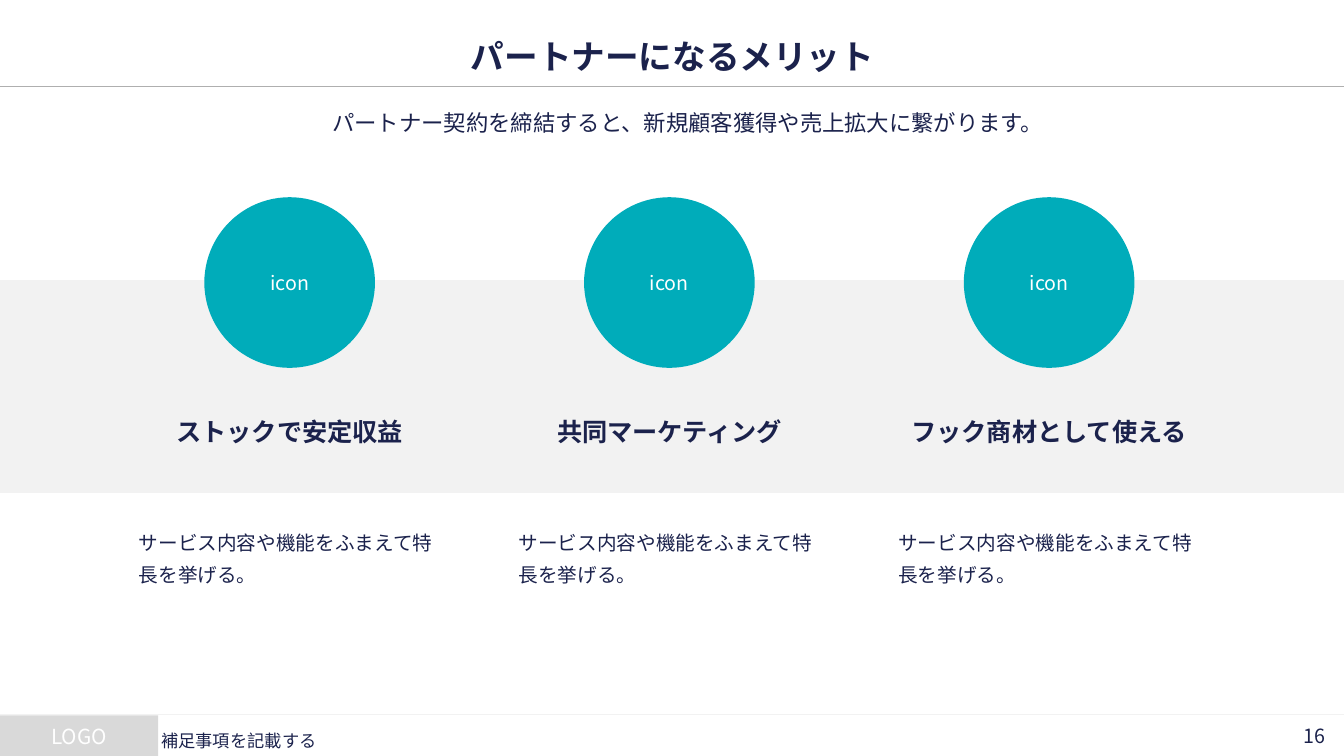
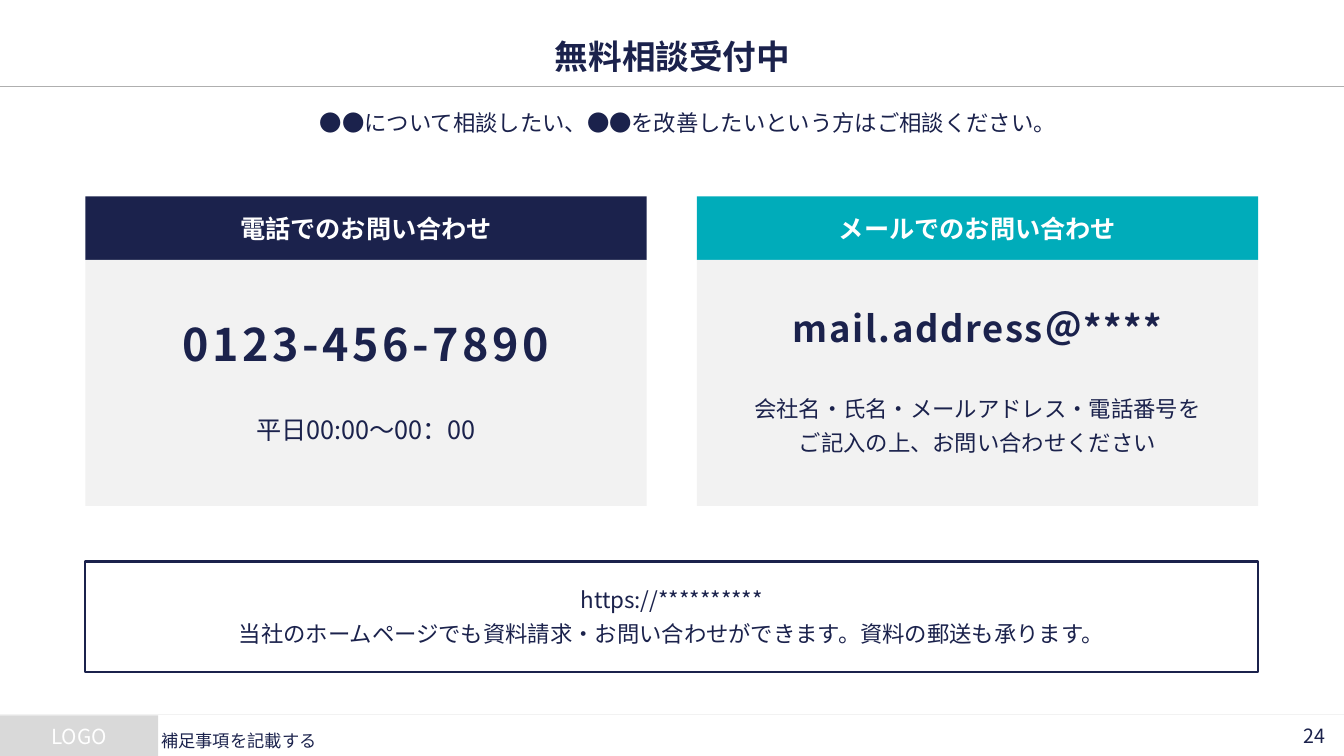
from dataclasses import dataclass, replace

from lxml import etree
from pptx import Presentation
from pptx.dml.color import RGBColor
from pptx.enum.shapes import MSO_CONNECTOR, MSO_SHAPE
from pptx.enum.text import MSO_ANCHOR, PP_ALIGN
from pptx.oxml.ns import qn
from pptx.util import Cm, Pt

RECT, OVAL = MSO_SHAPE.RECTANGLE, MSO_SHAPE.OVAL
STRAIGHT = MSO_CONNECTOR.STRAIGHT
LEFT, CENTER, RIGHT = PP_ALIGN.LEFT, PP_ALIGN.CENTER, PP_ALIGN.RIGHT
TOP, MIDDLE = MSO_ANCHOR.TOP, MSO_ANCHOR.MIDDLE


@dataclass(frozen=True)
class Theme:
    navy: str = "1B224C"
    teal: str = "00ACBA"
    white: str = "FFFFFF"
    panel: str = "F2F2F2"
    logo_fill: str = "D9D9D9"
    rule: str = "AFAFAF"
    font: str = "Noto Sans CJK JP"
    heading_font: str = "Arial"
    title: float = 24
    heading: float = 18
    lead: float = 16
    body: float = 14
    logo: float = 14.8
    note: float = 12.3
    phone: float = 32
    mail: float = 26
    width: float = 33.87
    height: float = 19.05


THEME = Theme()


@dataclass(frozen=True)
class Style:
    size: float
    color: str = THEME.navy
    bold: bool = False
    align: PP_ALIGN = CENTER
    font: str = THEME.font
    tracking: float = 0
    after: float = 0
    leading: float = 1


TITLE = Style(THEME.title, bold=True)
LEAD = Style(THEME.lead, leading=1.3)
LOGO = Style(THEME.logo, THEME.white)
PAGE = Style(THEME.body, align=RIGHT)
NOTE = Style(THEME.note, align=LEFT, leading=1.5)
ICON = Style(THEME.body, THEME.white)
MERIT = Style(THEME.heading, bold=True, font=THEME.heading_font, after=4.9)
DETAIL = Style(THEME.body, align=LEFT, leading=1.4, after=4)
CARD_HEAD = Style(THEME.heading, THEME.white, bold=True)
PHONE = Style(THEME.phone, bold=True, tracking=2.5, after=31.3)
HOURS = Style(THEME.heading, after=4.9)
MAIL = Style(THEME.mail, bold=True, tracking=1.2, after=33)
GUIDE = Style(THEME.lead, after=4.9)


class Deck:
    def __init__(self, theme):
        self.theme = theme
        self.file = Presentation()
        self.file.slide_width = Cm(theme.width)
        self.file.slide_height = Cm(theme.height)
        self.slide = None

    def add_slide(self, title, lead, page):
        t = self.theme
        self.slide = self.file.slides.add_slide(self.file.slide_layouts[6])
        self.rule(18.01, t.panel)
        self.shape(RECT, (0, 18.03, 3.99, 1.02), t.logo_fill, [("LOGO", LOGO)])
        self.rule(2.18, t.rule)
        self.text((2.18, 0.86, 29.54, 1.09), title, TITLE)
        self.text((2.18, 2.46, 29.54, 2.18), lead, LEAD, TOP, (0.89, 0.1, 0.1, 0.1))
        self.text((31.78, 18.03, 2.13, 1.02), str(page), PAGE,
                  margins=(0.2, 0.2, 0.5, 0.2))
        self.text((3.96, 18.03, 25.9, 1.02), "補足事項を記載する", NOTE)

    def rule(self, y, color):
        line = self.slide.shapes.add_connector(
            STRAIGHT, Cm(0), Cm(y), Cm(self.theme.width), Cm(y))
        line.line.color.rgb = RGBColor.from_string(color)
        line.line.width = Pt(0.75)
        etree.SubElement(line._element.spPr, qn("a:effectLst"))

    def shape(self, kind, box, fill=None, lines=(), outline=None,
              margins=(0.1, 0.1, 0.1, 0.1)):
        shape = self.slide.shapes.add_shape(kind, *map(Cm, box))
        shape.shadow.inherit = False
        if fill:
            shape.fill.solid()
            shape.fill.fore_color.rgb = RGBColor.from_string(fill)
        else:
            shape.fill.background()
        if outline:
            shape.line.color.rgb = RGBColor.from_string(outline)
            shape.line.width = Pt(1.5)
        else:
            shape.line.fill.background()
        if lines:
            self.set_lines(shape.text_frame, lines, MIDDLE, margins)

    def text(self, box, words, style, anchor=MIDDLE, margins=(0.1, 0.1, 0.1, 0.1)):
        label = self.slide.shapes.add_textbox(*map(Cm, box))
        self.set_lines(label.text_frame, [(words, style)], anchor, margins)

    def set_lines(self, frame, lines, anchor, margins):
        frame.word_wrap = True
        frame.vertical_anchor = anchor
        (frame.margin_left, frame.margin_top,
         frame.margin_right, frame.margin_bottom) = map(Cm, margins)
        frame.text = "\n".join(words for words, _ in lines)
        for paragraph, (_, style) in zip(frame.paragraphs, lines):
            paragraph.alignment = style.align
            paragraph.line_spacing = style.leading
            paragraph.space_after = Pt(style.after)
            for run in paragraph.runs:
                self.style_run(run, style)

    def style_run(self, run, style):
        run.font.size = Pt(style.size)
        run.font.bold = style.bold
        run.font.color.rgb = RGBColor.from_string(style.color)
        run.font.name = style.font
        properties = run._r.get_or_add_rPr()
        properties.set("spc", str(round(style.tracking * 100)))
        east_asian = etree.SubElement(properties, qn("a:ea"))
        east_asian.set("typeface", self.theme.font)

    def merit(self, left, heading, detail):
        width, icon = 7.8, 4.3
        self.shape(OVAL, (left + (width - icon) / 2, 4.97, icon, icon),
                   self.theme.teal, [("icon", ICON)])
        self.text((left, 9.8, width, 2.16), heading, MERIT)
        self.text((left, 13.03, width, 1.8), detail, DETAIL, TOP)

    def contact(self, left, width, color, heading, lines):
        top, head = 4.95, 1.6
        self.shape(RECT, (left, top, width, head), color, [(heading, CARD_HEAD)])
        self.shape(RECT, (left, top + head, width, 6.2), self.theme.panel, lines,
                   margins=(0.38, 0.38, 0.38, 0.48))


def merits(deck):
    deck.add_slide("パートナーになるメリット",
                   "パートナー契約を締結すると、新規顧客獲得や売上拡大に繋がります。", 16)
    deck.shape(RECT, (0, 7.06, THEME.width, 5.36), THEME.panel)
    headings = ("ストックで安定収益", "共同マーケティング", "フック商材として使える")
    for column, heading in enumerate(headings):
        deck.merit(3.4 + column * 9.57, heading,
                   "サービス内容や機能をふまえて特長を挙げる。")


def consultation(deck):
    deck.add_slide("無料相談受付中",
                   "●●について相談したい、●●を改善したいという方はご相談ください。", 24)
    left, width, gap = 2.15, 14.15, 1.26
    contacts = (
        (THEME.navy, "電話でのお問い合わせ",
         [("0123-456-7890", PHONE), ("平日00:00〜00：00", HOURS)]),
        (THEME.teal, "メールでのお問い合わせ",
         [("mail.address＠****", MAIL),
          ("会社名・氏名・メールアドレス・電話番号を", GUIDE),
          ("ご記入の上、お問い合わせください", GUIDE)]),
    )
    for column, (color, heading, lines) in enumerate(contacts):
        deck.contact(left + column * (width + gap), width, color, heading, lines)
    deck.shape(RECT, (left, 14.15, 2 * width + gap, 2.79), outline=THEME.navy, lines=[
        ("https://**********", GUIDE),
        ("当社のホームページでも資料請求・お問い合わせができます。資料の郵送も承ります。",
         replace(GUIDE, after=0)),
    ], margins=(0.6, 0.6, 0.6, 0.6))


def main():
    deck = Deck(THEME)
    merits(deck)
    consultation(deck)
    deck.file.save("out.pptx")


if __name__ == "__main__":
    main()
